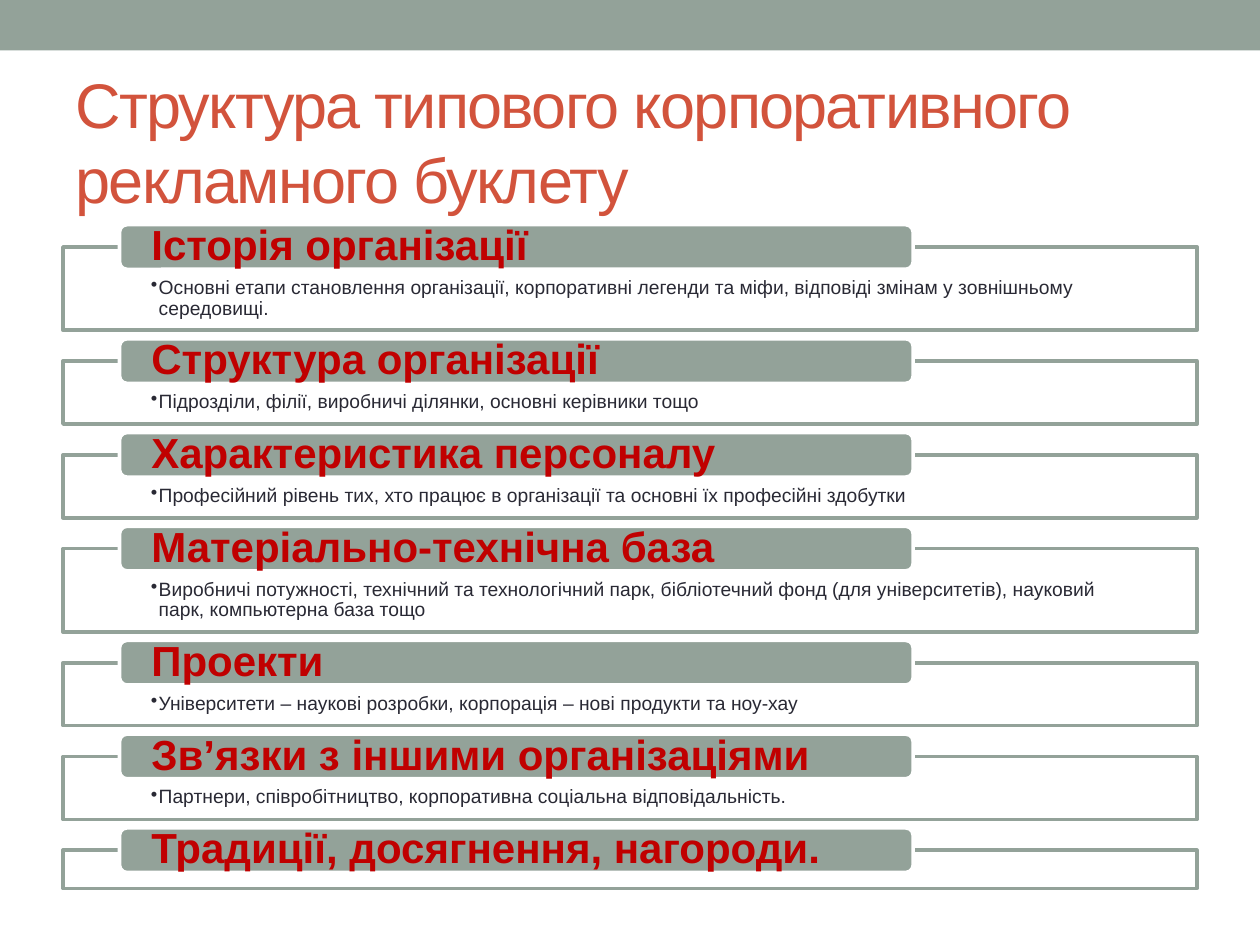
from pptx import Presentation
from pptx.dml.color import RGBColor
from pptx.enum.shapes import MSO_SHAPE as SHAPE
from pptx.enum.text import MSO_ANCHOR as ANCHOR, MSO_AUTO_SIZE as AUTO, PP_ALIGN as ALIGN
from pptx.oxml import parse_xml
from pptx.oxml.ns import nsdecls
from pptx.util import Cm, Pt

COLORS = {"sage": "93A299", "title": "D2533C", "heading": "C00000",
          "text": "292934", "white": "FFFFFF"}
SECTIONS = [  # heading, detail, frame height in cm
    ("Історія організації",
     "Основні етапи становлення організації, корпоративні легенди та міфи, "
     "відповіді змінам у зовнішньому середовищі.", 1.68),
    ("Структура організації",
     "Підрозділи, філії, виробничі ділянки, основні керівники тощо", 1.27),
    ("Характеристика персоналу",
     "Професійний рівень тих, хто працює в організації та основні їх "
     "професійні здобутки", 1.27),
    ("Матеріально-технічна база",
     "Виробничі потужності, технічний та технологічний парк, бібліотечний фонд "
     "(для університетів), науковий парк, компьютерна база тощо", 1.68),
    ("Проекти",
     "Університети – наукові розробки, корпорація – нові продукти та ноу-хау", 1.27),
    ("Зв’язки з іншими організаціями",
     "Партнери, співробітництво, корпоративна соціальна відповідальність.", 1.27),
    ("Традиції, досягнення, нагороди.", None, 0.77),
]
GAP = 0.62
TAB_RISE = 0.45

prs = Presentation()
prs.slide_width, prs.slide_height = Cm(25.4), Cm(19.05)
s = prs.slides.add_slide(prs.slide_layouts[5])


def add_box(kind, x, y, w, h, fill, line=None):
    sp = s.shapes.add_shape(kind, Cm(x), Cm(y), Cm(w), Cm(h))
    sp.shadow.inherit = False
    sp.fill.solid()
    sp.fill.fore_color.rgb = RGBColor.from_string(COLORS[fill])
    if line:
        sp.line.color.rgb = RGBColor.from_string(COLORS[line])
        sp.line.width = Pt(2.08)
    else:
        sp.line.fill.background()
    return sp


def write(tf, text, size, color, bold=False):
    tf.word_wrap = True
    p = tf.paragraphs[0]
    p.alignment = ALIGN.LEFT
    r = p.add_run()
    r.text = text
    r.font.name, r.font.size, r.font.bold = "Arial", Pt(size), bold
    r.font.color.rgb = RGBColor.from_string(COLORS[color])
    return p


add_box(SHAPE.RECTANGLE, 0, 0, 25.4, 1.02, "sage")

title = s.shapes.title
title.left, title.top, title.width, title.height = Cm(1.27), Cm(1.47), Cm(22.86), Cm(2.74)
tf = title.text_frame
tf.auto_size = AUTO.NONE
tf.vertical_anchor = ANCHOR.MIDDLE
p = write(tf, "Структура типового корпоративного рекламного буклету", 36, "title")
p.runs[0].font._element.set("spc", "-100")

y = 4.98
for heading, detail, height in SECTIONS:
    frame = add_box(SHAPE.RECTANGLE, 1.27, y, 22.86, height, "white", "sage")
    if detail:
        tf = frame.text_frame
        tf.vertical_anchor = ANCHOR.TOP
        tf.margin_left = tf.margin_right = Cm(1.77)
        tf.margin_top, tf.margin_bottom = Cm(0.62), Cm(0.22)
        p = write(tf, detail, 11, "text")
        p.level = 1
        p.line_spacing = 0.9
        pPr = p._p.get_or_add_pPr()
        pPr.set("marL", str(Cm(0.16)))
        pPr.set("indent", str(-Cm(0.16)))
        pPr.append(parse_xml(f'<a:buChar {nsdecls("a")} char="•"/>'))

    tab = add_box(SHAPE.ROUNDED_RECTANGLE, 2.41, y - TAB_RISE, 16, 0.9, "sage", "white")
    tf = tab.text_frame
    tf.vertical_anchor = ANCHOR.MIDDLE
    tf.margin_left = tf.margin_right = Cm(0.6)
    tf.margin_top = tf.margin_bottom = 0
    write(tf, heading, 24, "heading", bold=True).line_spacing = 0.9
    y += height + GAP

prs.save("out.pptx")
